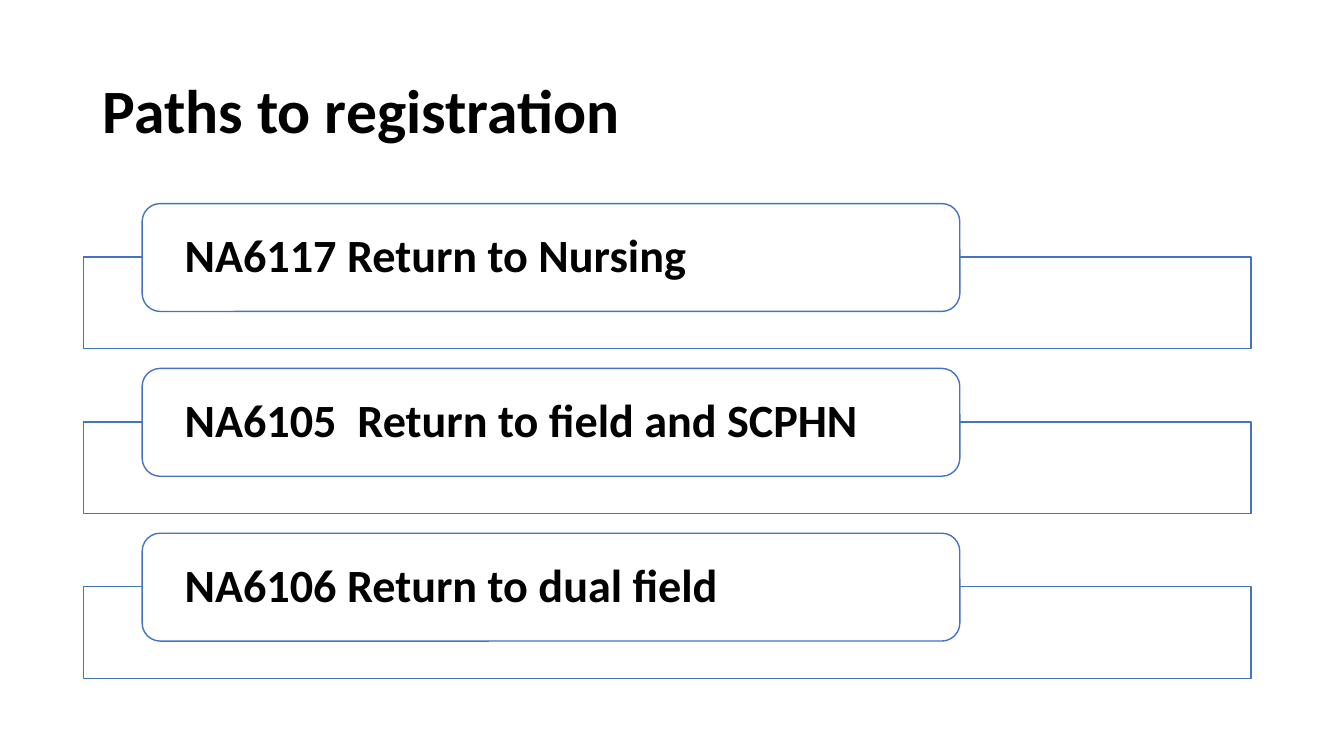
from dataclasses import dataclass

from pptx import Presentation
from pptx.dml.color import RGBColor
from pptx.enum.shapes import MSO_SHAPE
from pptx.enum.text import MSO_ANCHOR, MSO_AUTO_SIZE, PP_ALIGN
from pptx.util import Inches, Pt

RECTANGLE = MSO_SHAPE.RECTANGLE
ROUNDED = MSO_SHAPE.ROUNDED_RECTANGLE
MIDDLE = MSO_ANCHOR.MIDDLE
LEFT = PP_ALIGN.LEFT
NO_AUTOFIT = MSO_AUTO_SIZE.NONE

TITLE = "Paths to registration"
PATHS = [
    "NA6117 Return to Nursing",
    "NA6105  Return to field and SCPHN",
    "NA6106 Return to dual field",
]


@dataclass(frozen=True)
class Theme:
    font: str = "Calibri"
    text: RGBColor = RGBColor(0, 0, 0)
    fill: RGBColor = RGBColor(255, 255, 255)
    line: RGBColor = RGBColor(0x44, 0x72, 0xC4)
    line_width: Pt = Pt(1)
    title_size: Pt = Pt(44)
    label_size: Pt = Pt(33)


THEME = Theme()
LABEL_TOP = 2.02
ROW_STEP = 1.635
FRAME_DROP = 0.53


def write_text(shape, text, size, inset_x, inset_y):
    frame = shape.text_frame
    frame.auto_size = NO_AUTOFIT
    frame.word_wrap = True
    frame.vertical_anchor = MIDDLE
    frame.margin_left = frame.margin_right = Inches(inset_x)
    frame.margin_top = frame.margin_bottom = Inches(inset_y)
    frame.text = text
    paragraph = frame.paragraphs[0]
    paragraph.alignment = LEFT
    paragraph.line_spacing = 0.9
    paragraph.font.name = THEME.font
    paragraph.font.size = size
    paragraph.font.bold = True
    paragraph.font.color.rgb = THEME.text


def add_box(page, kind, left, top, width, height):
    box = page.shapes.add_shape(
        kind, Inches(left), Inches(top), Inches(width), Inches(height)
    )
    box.shadow.inherit = False
    box.fill.solid()
    box.fill.fore_color.rgb = THEME.fill
    box.line.color.rgb = THEME.line
    box.line.width = THEME.line_width
    return box


def main():
    deck = Presentation()
    deck.slide_width = Inches(13.33)
    deck.slide_height = Inches(7.5)
    page = deck.slides.add_slide(deck.slide_layouts[5])

    title = page.shapes.title
    title.left, title.top = Inches(0.92), Inches(0.4)
    title.width, title.height = Inches(11.5), Inches(1.45)
    write_text(title, TITLE, THEME.title_size, 0.1, 0.05)

    for row, path_name in enumerate(PATHS):
        top = LABEL_TOP + row * ROW_STEP
        add_box(page, RECTANGLE, 0.83, top + FRAME_DROP, 11.58, 0.91)
        label = add_box(page, ROUNDED, 1.41, top, 8.11, 1.07)
        write_text(label, path_name, THEME.label_size, 0.37, 0.05)

    deck.save("out.pptx")


if __name__ == "__main__":
    main()
